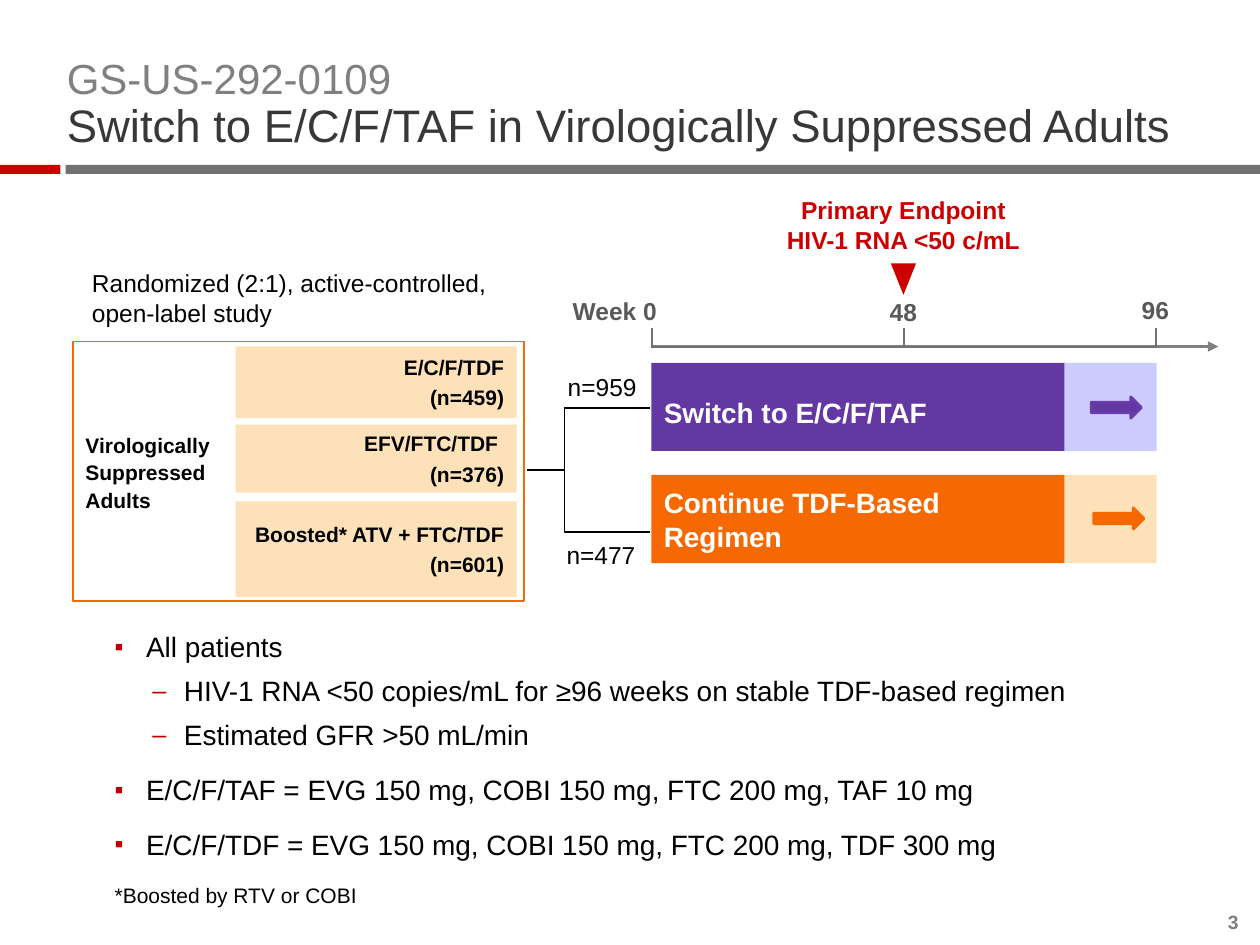
from dataclasses import dataclass

from lxml import etree
from pptx import Presentation
from pptx.dml.color import RGBColor
from pptx.enum.shapes import MSO_CONNECTOR, MSO_SHAPE
from pptx.enum.text import MSO_ANCHOR, MSO_AUTO_SIZE, PP_ALIGN
from pptx.oxml.ns import qn
from pptx.util import Inches, Pt

RECT, TRIANGLE = MSO_SHAPE.RECTANGLE, MSO_SHAPE.ISOSCELES_TRIANGLE
ARROW = MSO_SHAPE.RIGHT_ARROW
LEFT_BRACKET, RIGHT_BRACKET = MSO_SHAPE.LEFT_BRACKET, MSO_SHAPE.RIGHT_BRACKET
STRAIGHT = MSO_CONNECTOR.STRAIGHT
TOP, MIDDLE, BOTTOM = MSO_ANCHOR.TOP, MSO_ANCHOR.MIDDLE, MSO_ANCHOR.BOTTOM
LEFT, CENTER, RIGHT = PP_ALIGN.LEFT, PP_ALIGN.CENTER, PP_ALIGN.RIGHT
NO_FIT = MSO_AUTO_SIZE.NONE
DEFAULT_INSETS = (0.1, 0.05, 0.1, 0.05)
NO_INSETS = (0, 0, 0, 0)


@dataclass(frozen=True)
class Theme:
    font: str = "Arial"
    black: str = "000000"
    white: str = "FFFFFF"
    red: str = "CC0000"
    bullet: str = "C00000"
    title: str = "383838"
    study: str = "808080"
    rule: str = "717171"
    week: str = "595959"
    page: str = "7F7F7F"
    purple: str = "6338A2"
    purple_edge: str = "693CAA"
    lilac: str = "CCCCFF"
    orange: str = "F66900"
    peach: str = "FDE1B9"
    title_size: int = 26
    study_size: int = 24
    body_size: int = 16
    label_size: int = 14
    small_size: int = 12
    page_size: int = 11


T = Theme()


def rgb(color):
    return RGBColor.from_string(color)


def set_attrs(obj, values):
    for name, value in values.items():
        setattr(obj, name, value)


def add_run(p, text, size, color, bold=False):
    r = p.add_run()
    r.text = text
    set_attrs(r.font, {"name": T.font, "size": Pt(size), "bold": bold})
    r.font.color.rgb = rgb(color)


def setup_frame(tf, anchor=TOP, insets=DEFAULT_INSETS):
    left, top, right, bottom = map(Inches, insets)
    set_attrs(tf, {"word_wrap": True, "auto_size": NO_FIT, "vertical_anchor": anchor,
                   "margin_left": left, "margin_top": top,
                   "margin_right": right, "margin_bottom": bottom})


def write(sp, paragraphs, size, color, bold=False, align=LEFT, anchor=TOP,
          insets=DEFAULT_INSETS, spacing=1.0, before=0):
    tf = sp.text_frame
    setup_frame(tf, anchor, insets)
    for i, text in enumerate(paragraphs):
        p = tf.add_paragraph() if i else tf.paragraphs[0]
        set_attrs(p, {"alignment": align, "line_spacing": spacing,
                      "space_before": Pt(before)})
        for j, line in enumerate(text.split("\n")):
            if j:
                p.add_line_break()
            add_run(p, line, size, color, bold)


def add_text(s, box, text, size, color, **style):
    sp = s.shapes.add_textbox(*map(Inches, box))
    write(sp, [text], size, color, **style)


def add_shape(s, kind, box, fill=None, line=None, width=1):
    sp = s.shapes.add_shape(kind, *map(Inches, box))
    sp.shadow.inherit = False
    if fill:
        sp.fill.solid()
        sp.fill.fore_color.rgb = rgb(fill)
    else:
        sp.fill.background()
    if line:
        sp.line.color.rgb = rgb(line)
        sp.line.width = Pt(width)
    else:
        sp.line.fill.background()
    return sp


def add_bracket(s, kind, box, rotation=0, **style):
    sp = add_shape(s, kind, box, **style)
    sp.adjustments[0] = 0
    sp.rotation = rotation


def add_line(s, start, end, color, width, arrow=False):
    sp = s.shapes.add_connector(STRAIGHT, *map(Inches, start + end))
    sp.line.color.rgb = rgb(color)
    sp.line.width = Pt(width)
    if arrow:
        etree.SubElement(sp.line._get_or_add_ln(), qn("a:tailEnd"), type="triangle")
    etree.SubElement(sp._element.spPr, qn("a:effectLst"))


def set_bullet(p, char, margin):
    pPr = p._p.get_or_add_pPr()
    pPr.set("marL", str(Inches(margin)))
    pPr.set("indent", str(Inches(-0.25 if char else 0)))
    if not char:
        etree.SubElement(pPr, qn("a:buNone"))
        return
    clr = etree.SubElement(pPr, qn("a:buClr"))
    etree.SubElement(clr, qn("a:srgbClr"), val=T.bullet)
    etree.SubElement(pPr, qn("a:buSzPct"), val="90000")
    etree.SubElement(pPr, qn("a:buFont"), typeface=T.font)
    etree.SubElement(pPr, qn("a:buChar"), char=char)


def place(sp, box):
    set_attrs(sp, dict(zip(("left", "top", "width", "height"), map(Inches, box))))


def add_title(s):
    add_shape(s, RECT, (0.52, 1.31, 9.48, 0.07), T.rule)
    add_shape(s, RECT, (0, 1.31, 0.48, 0.07), T.red)
    sp = s.shapes.title
    place(sp, (0.53, 0.47, 9.2, 0.74))
    setup_frame(sp.text_frame, BOTTOM, NO_INSETS)
    p = sp.text_frame.paragraphs[0]
    set_attrs(p, {"alignment": LEFT, "line_spacing": 0.9})
    add_run(p, "GS-US-292-0109", T.study_size, T.study)
    p.add_line_break()
    add_run(p, "Switch to E/C/F/TAF in Virologically Suppressed Adults", T.title_size, T.title)


def add_body(s):
    sp = s.placeholders[1]
    place(sp, (0.91, 5, 7.81, 2.24))
    tf = sp.text_frame
    setup_frame(tf, TOP, NO_INSETS)
    styles = {"item": (0, "▪", 0.25, 1.0, 12, T.body_size),
              "sub": (1, "–", 0.55, 0.9, 8, T.body_size),
              "note": (0, None, 0, 1.0, 12, T.small_size)}
    rows = [("item", "All patients"),
            ("sub", "HIV-1 RNA <50 copies/mL for ≥96 weeks on stable TDF-based regimen"),
            ("sub", "Estimated GFR >50 mL/min"),
            ("item", "E/C/F/TAF = EVG 150 mg, COBI 150 mg, FTC 200 mg, TAF 10 mg"),
            ("item", "E/C/F/TDF = EVG 150 mg, COBI 150 mg, FTC 200 mg, TDF 300 mg"),
            ("note", "*Boosted by RTV or COBI")]
    for i, (kind, text) in enumerate(rows):
        level, char, margin, spacing, before, size = styles[kind]
        p = tf.add_paragraph() if i else tf.paragraphs[0]
        set_bullet(p, char, margin)
        set_attrs(p, {"level": level, "line_spacing": spacing, "space_before": Pt(before)})
        add_run(p, text, size, T.black)


def add_population(s):
    add_text(s, (0.73, 2.13, 3.6, 0.47), "Randomized (2:1), active-controlled,\nopen-label study",
             T.label_size, T.black, insets=NO_INSETS)
    sp = add_shape(s, RECT, (0.58, 2.71, 3.58, 2.06), line=T.orange, width=0.75)
    write(sp, ["Virologically\nSuppressed\nAdults"], T.small_size, T.black, bold=True,
          anchor=MIDDLE, insets=(0.1, 0.1, 0.2, 0.1), spacing=1.1)
    for top, height, regimen, count in ((2.75, 0.57, "E/C/F/TDF", 459),
                                        (3.37, 0.54, "EFV/FTC/TDF ", 376),
                                        (3.98, 0.76, "Boosted* ATV + FTC/TDF", 601)):
        sp = add_shape(s, RECT, (1.87, top, 2.23, height), T.peach)
        write(sp, [regimen, f"(n={count})"], T.small_size, T.black, bold=True,
              align=RIGHT, anchor=MIDDLE, insets=(0.1, 0, 0.1, 0), before=3)


def add_timeline(s):
    add_text(s, (5.96, 1.5, 2.42, 0.57), "Primary Endpoint\nHIV-1 RNA <50 c/mL",
             T.label_size, T.red, bold=True, align=CENTER)
    add_shape(s, TRIANGLE, (7.07, 2.09, 0.2, 0.25), T.red).rotation = 180
    add_line(s, (5.17, 2.75), (9.67, 2.75), T.study, 1.5, arrow=True)
    for span in (4, 2):
        center = 5.17 + span / 2
        add_bracket(s, RIGHT_BRACKET, (center - 0.07, 2.68 - span / 2, 0.15, span),
                    rotation=90, line=T.rule, width=1.5)
    for left, top, width, text in ((4.31, 2.3, 1.14, "Week 0"), (6.96, 2.31, 0.42, "48"),
                                   (8.96, 2.29, 0.42, "96")):
        add_text(s, (left, top, width, 0.34), text, T.label_size, T.week,
                 bold=True, align=CENTER)


def add_arms(s):
    add_line(s, (4.18, 3.73), (4.48, 3.73), T.black, 1)
    add_bracket(s, LEFT_BRACKET, (4.48, 3.24, 0.68, 0.98), fill=T.white, line=T.black)
    for left, top, count in ((4.21, 2.9, 959), (4.2, 4.24, 477)):
        add_text(s, (left, top, 1.14, 0.34), f"n={count}", T.label_size, T.black, align=CENTER)
    arms = [(2.88, "Switch to E/C/F/TAF", T.purple, T.lilac, T.purple_edge,
             (8.66, 3.15), {"spacing": 1.3, "before": 3}),
            (3.77, "Continue TDF-Based\nRegimen", T.orange, T.peach, T.orange,
             (8.68, 4.03), {})]
    for top, text, color, tint, edge, arrow_at, style in arms:
        sp = add_shape(s, RECT, (5.17, top, 3.28, 0.7), color)
        write(sp, [text], T.body_size, T.white, bold=True, anchor=MIDDLE, **style)
        add_shape(s, RECT, (8.45, top, 0.73, 0.7), tint)
        add_shape(s, ARROW, arrow_at + (0.4, 0.17), color, edge, 1.5)


def main():
    prs = Presentation()
    set_attrs(prs, {"slide_width": Inches(10), "slide_height": Inches(7.5)})
    s = prs.slides.add_slide(prs.slide_layouts[1])
    add_title(s)
    add_body(s)
    add_text(s, (9.56, 7.23, 0.27, 0.18), "3", T.page_size, T.page, bold=True,
             align=RIGHT, anchor=BOTTOM, insets=NO_INSETS)
    add_population(s)
    add_timeline(s)
    add_arms(s)
    prs.save("out.pptx")


if __name__ == "__main__":
    main()
